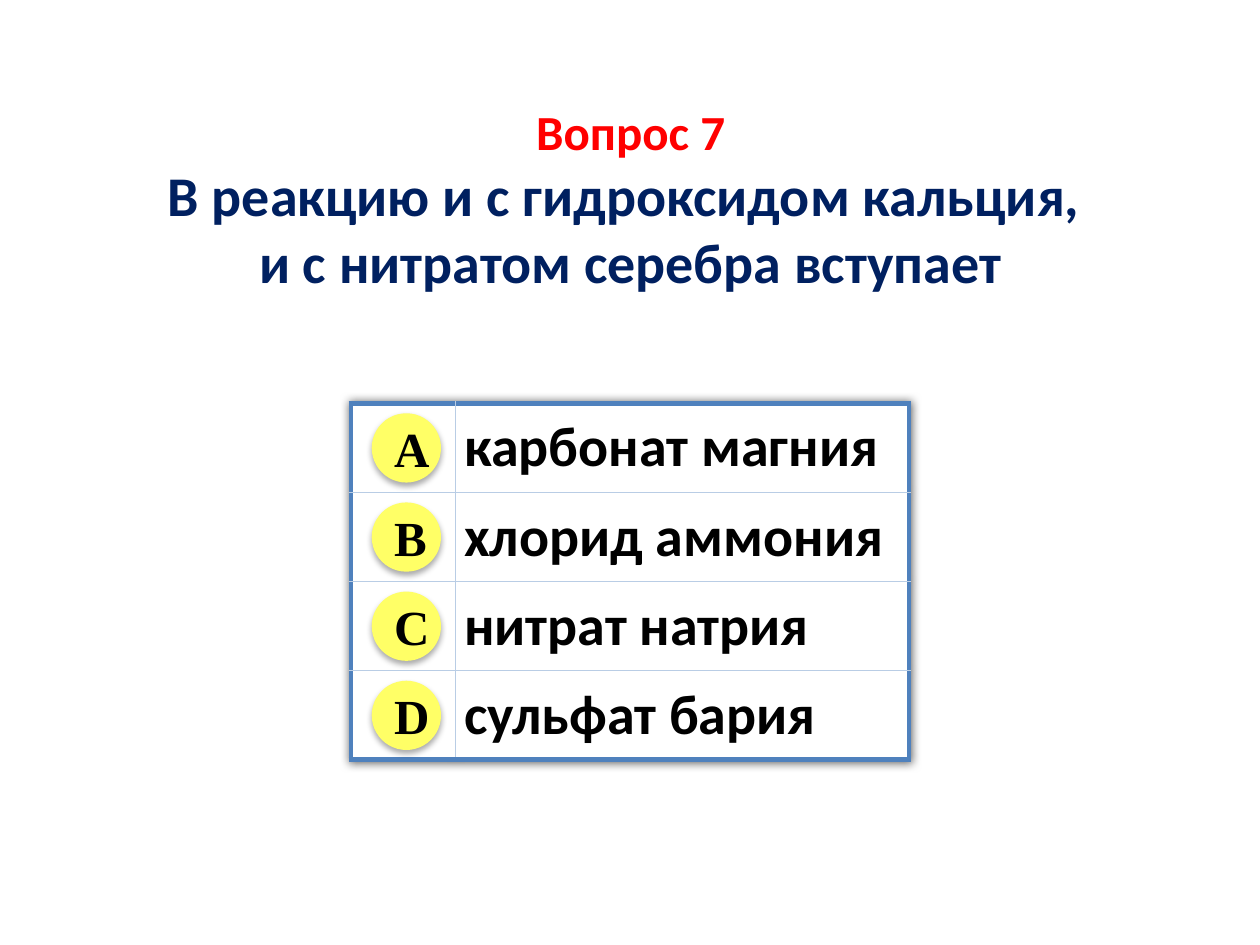
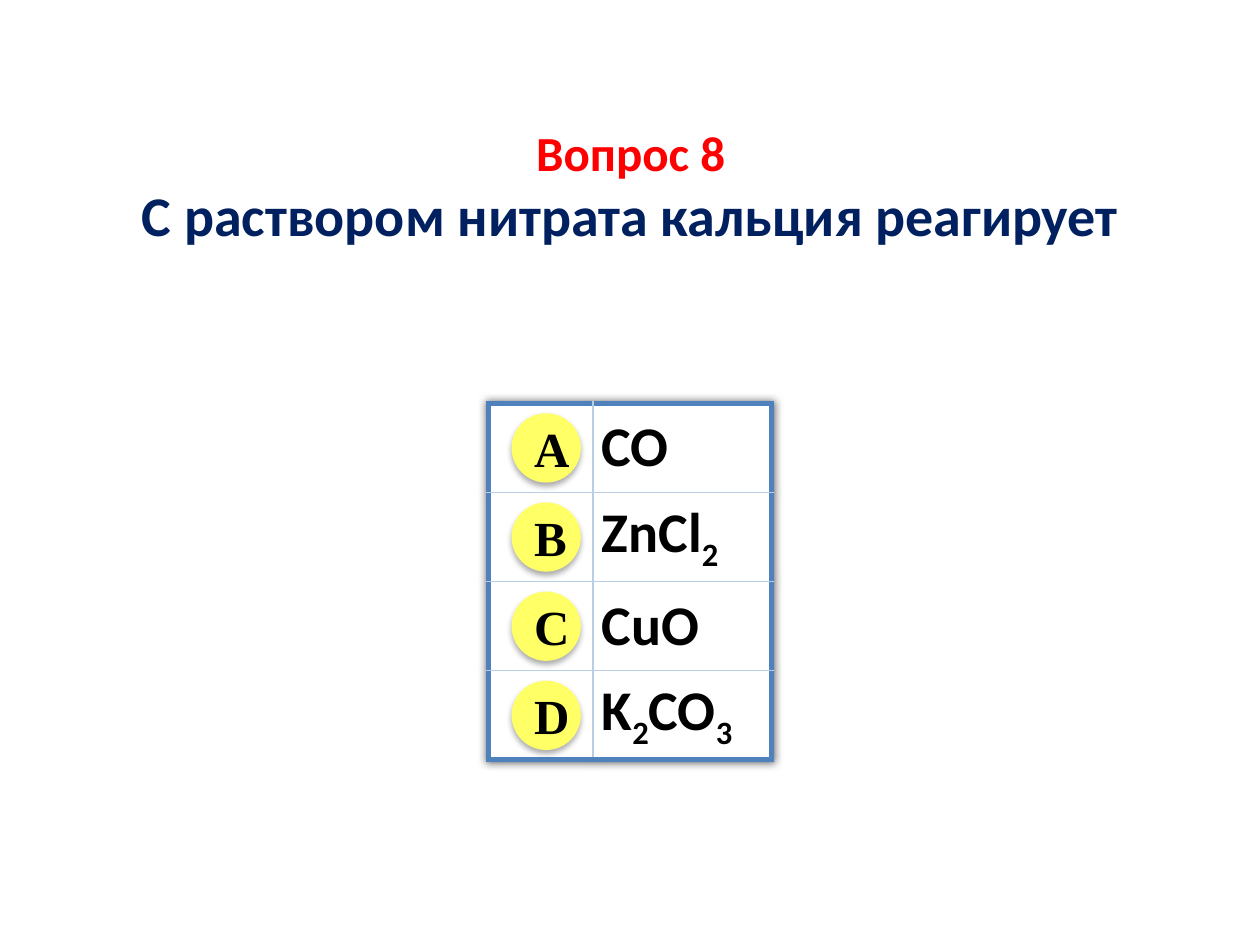
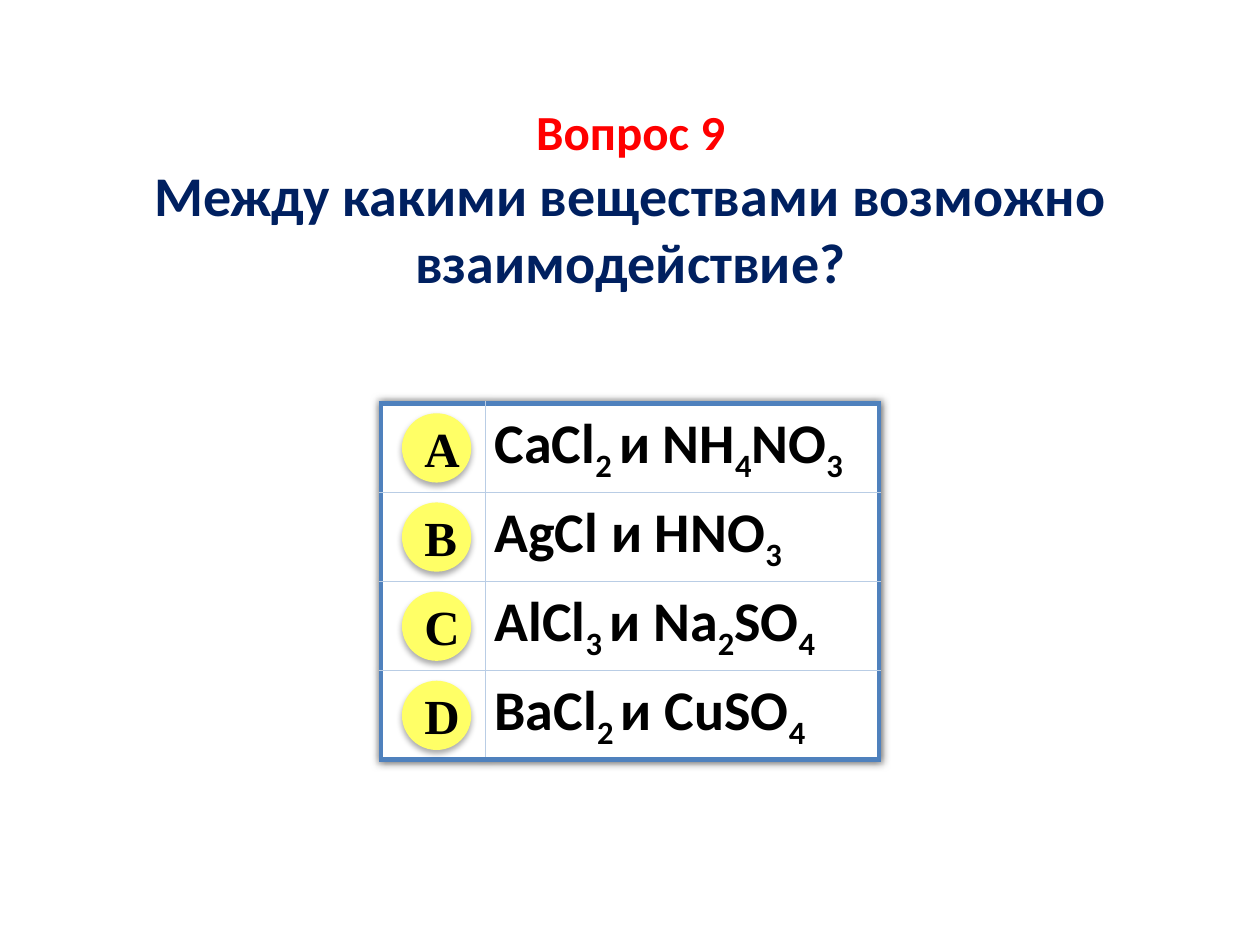
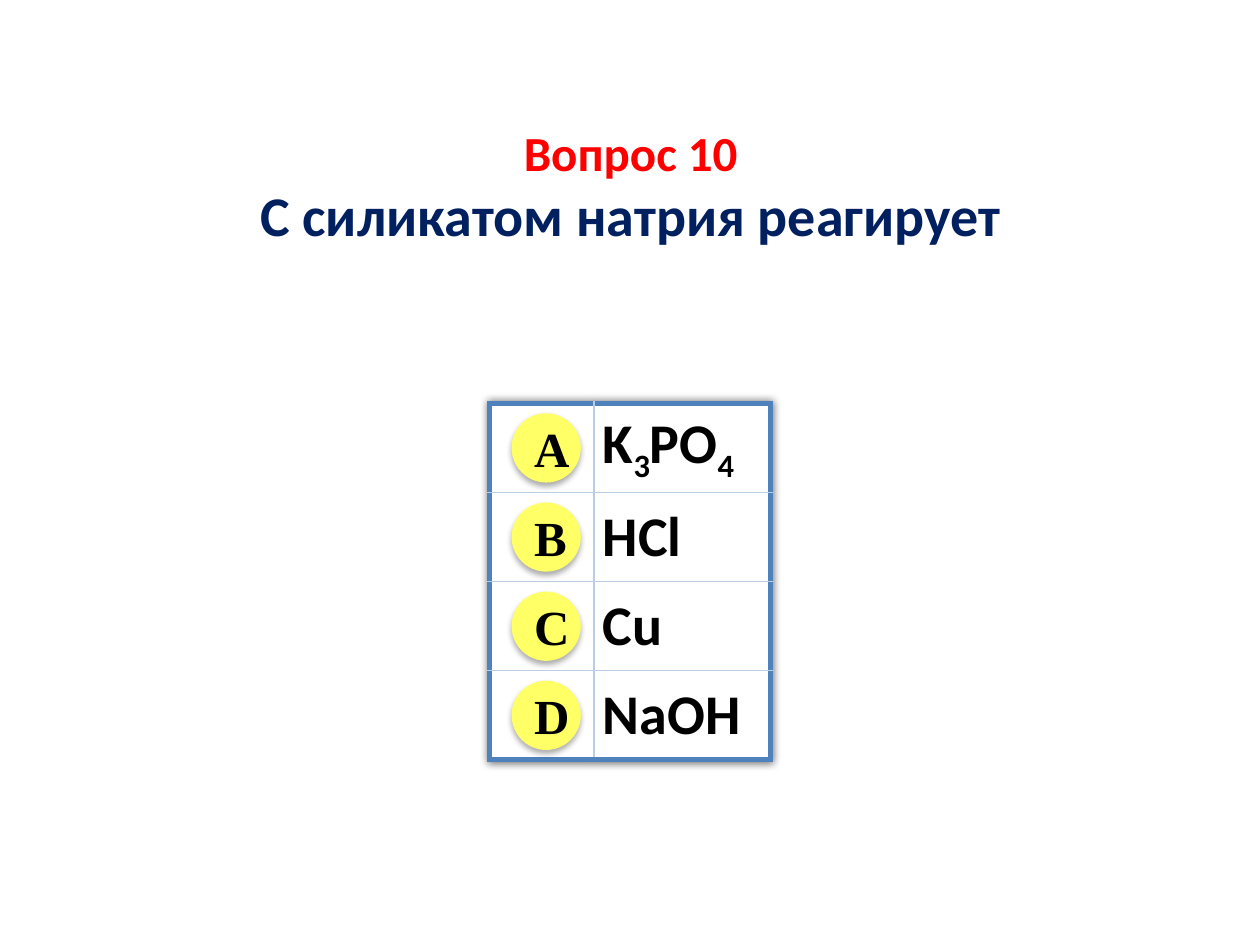
"""Build four chemistry quiz slides with a question and four answers each."""
from lxml.etree import SubElement
from pptx import Presentation
from pptx.dml.color import RGBColor
from pptx.enum.shapes import MSO_SHAPE
from pptx.enum.text import MSO_ANCHOR, MSO_AUTO_SIZE, PP_ALIGN
from pptx.oxml import parse_xml
from pptx.oxml.ns import nsdecls, qn
from pptx.util import Inches, Pt

QUESTIONS = [
    {"heading": "Вопрос 7",
     "lines": ["В реакцию и с гидроксидом кальция, ", "и с нитратом серебра вступает"],
     "box": (0.76, 1.65), "answer_width": 3.6, "badge_left": 2.95,
     "answers": ["карбонат магния", "хлорид аммония", "нитрат натрия", "сульфат бария"]},
    {"heading": "Вопрос 8",
     "lines": ["С раствором нитрата кальция реагирует"],
     "box": (0.92, 1.11), "answer_width": 1.42, "badge_left": 4.06,
     "answers": ["CO", "ZnCl|2", "CuO", "K|2|CO|3"]},
    {"heading": "Вопрос 9",
     "lines": ["Между какими веществами возможно взаимодействие?"],
     "box": (0.76, 1.65), "answer_width": 3.12, "badge_left": 3.19,
     "answers": ["CaCl|2 |и NH|4|NO|3", "AgCl и HNO|3",
                 "AlCl|3 |и Na|2|SO|4", "BaCl|2 |и CuSO|4"]},
    {"heading": "Вопрос 10",
     "lines": ["С силикатом натрия реагирует"],
     "box": (0.92, 1.11), "answer_width": 1.4, "badge_left": 4.06,
     "answers": ["K|3|PO|4", "HCl", "Cu", "NaOH"]},
]
LETTERS = "ABCD"
SLIDE_WIDTH, SLIDE_HEIGHT = 10, 7.5
TABLE_TOP, TABLE_HEIGHT = 3.2, 2.83
ROW_HEIGHT = TABLE_HEIGHT / len(LETTERS)
LETTER_WIDTH = 0.83
BADGE_TOP, BADGE_SIZE = 3.28, 0.55
BLACK, WHITE, RED, NAVY = "000000", "FFFFFF", "FF0000", "002060"
YELLOW, FRAME, GRID = "FFFF66", "4F81BD", "B9CDE5"


def color(value):
    return RGBColor.from_string(value)


def style(font, size, value, name="Calibri"):
    font.size, font.bold, font.name = Pt(size), True, name
    font.color.rgb = color(value)


def fill(target, value):
    target.fill.solid()
    target.fill.fore_color.rgb = color(value)


def add_shadow(effects, blur, distance, alpha):
    shadow = SubElement(effects, qn("a:outerShdw"), blurRad=str(Pt(blur)),
                        dist=str(Pt(distance)), dir="5400000", rotWithShape="0")
    shade = SubElement(shadow, qn("a:srgbClr"), val=BLACK)
    SubElement(shade, qn("a:alpha"), val=str(alpha * 1000))


def add_plain_shape(shapes, kind, box, fill_color):
    shape = shapes.add_shape(kind, *map(Inches, box))
    shape.shadow.inherit = False
    shape.line.fill.background()
    fill(shape, fill_color)
    shape.text_frame.word_wrap = True
    return shape


def add_question(slide, question):
    top, height = question["box"]
    shape = add_plain_shape(slide.shapes, MSO_SHAPE.RECTANGLE, (0.24, top, 9.53, height), WHITE)
    frame = shape.text_frame
    frame.vertical_anchor = MSO_ANCHOR.TOP
    frame.auto_size = MSO_AUTO_SIZE.SHAPE_TO_FIT_TEXT
    frame.text = "\n".join([question["heading"], *question["lines"]])
    for index, paragraph in enumerate(frame.paragraphs):
        paragraph.alignment = PP_ALIGN.CENTER
        size, value = (32, NAVY) if index else (28, RED)
        style(paragraph.runs[0].font, size, value)


def set_borders(cell, outer_sides):
    properties = cell._tc.get_or_add_tcPr()
    for side in "LRTB":
        value, width = (FRAME, 3) if side in outer_sides else (GRID, 1)
        line = SubElement(properties, qn(f"a:ln{side}"), w=str(Pt(width)))
        SubElement(SubElement(line, qn("a:solidFill")), qn("a:srgbClr"), val=value)


def write_formula(cell, formula):
    """Write text whose every second part, split by a bar, is a subscript."""
    paragraph = cell.text_frame.paragraphs[0]
    for index, part in enumerate(formula.split("|")):
        run = paragraph.add_run()
        run.text = part
        style(run.font, 32, BLACK)
        if index % 2:
            run.font._element.set("baseline", "-25000")


def add_answers(slide, question):
    answers = question["answers"]
    widths = LETTER_WIDTH, question["answer_width"]
    box = (SLIDE_WIDTH - sum(widths)) / 2, TABLE_TOP, sum(widths), TABLE_HEIGHT
    table = slide.shapes.add_table(len(answers), 2, *map(Inches, box)).table
    table.first_row = table.horz_banding = False
    effects = parse_xml(f"<a:effectLst {nsdecls('a')}/>")
    add_shadow(effects, 5, 0, 60)
    table._tbl.tblPr.insert(0, effects)
    for column, width in zip(table.columns, widths):
        column.width = Inches(width)
    for row, answer in enumerate(answers):
        table.rows[row].height = Inches(ROW_HEIGHT)
        ends = ("T" if row == 0 else "") + ("B" if row == len(answers) - 1 else "")
        for column, side in enumerate("LR"):
            cell = table.cell(row, column)
            set_borders(cell, side + ends)
            fill(cell, WHITE)
            cell.vertical_anchor = MSO_ANCHOR.MIDDLE
            cell.margin_left = cell.margin_right = Inches(0.07)
            cell.margin_top = cell.margin_bottom = 0
        write_formula(table.cell(row, 1), answer)


def add_badges(slide, left):
    group = slide.shapes.add_group_shape()
    for row, letter in enumerate(LETTERS):
        box = left, BADGE_TOP + row * ROW_HEIGHT, BADGE_SIZE, BADGE_SIZE
        badge = add_plain_shape(group.shapes, MSO_SHAPE.OVAL, box, YELLOW)
        add_shadow(badge._element.spPr.find(qn("a:effectLst")), 3.5, 2.2, 32)
        frame = badge.text_frame
        frame.text = letter
        frame.vertical_anchor = MSO_ANCHOR.MIDDLE
        paragraph = frame.paragraphs[0]
        paragraph.alignment = PP_ALIGN.CENTER
        style(paragraph.runs[0].font, 28, BLACK, "Times New Roman")


def main():
    presentation = Presentation()
    presentation.slide_width = Inches(SLIDE_WIDTH)
    presentation.slide_height = Inches(SLIDE_HEIGHT)
    for question in QUESTIONS:
        slide = presentation.slides.add_slide(presentation.slide_layouts[6])
        add_answers(slide, question)
        add_badges(slide, question["badge_left"])
        add_question(slide, question)
    presentation.save("out.pptx")


if __name__ == "__main__":
    main()
